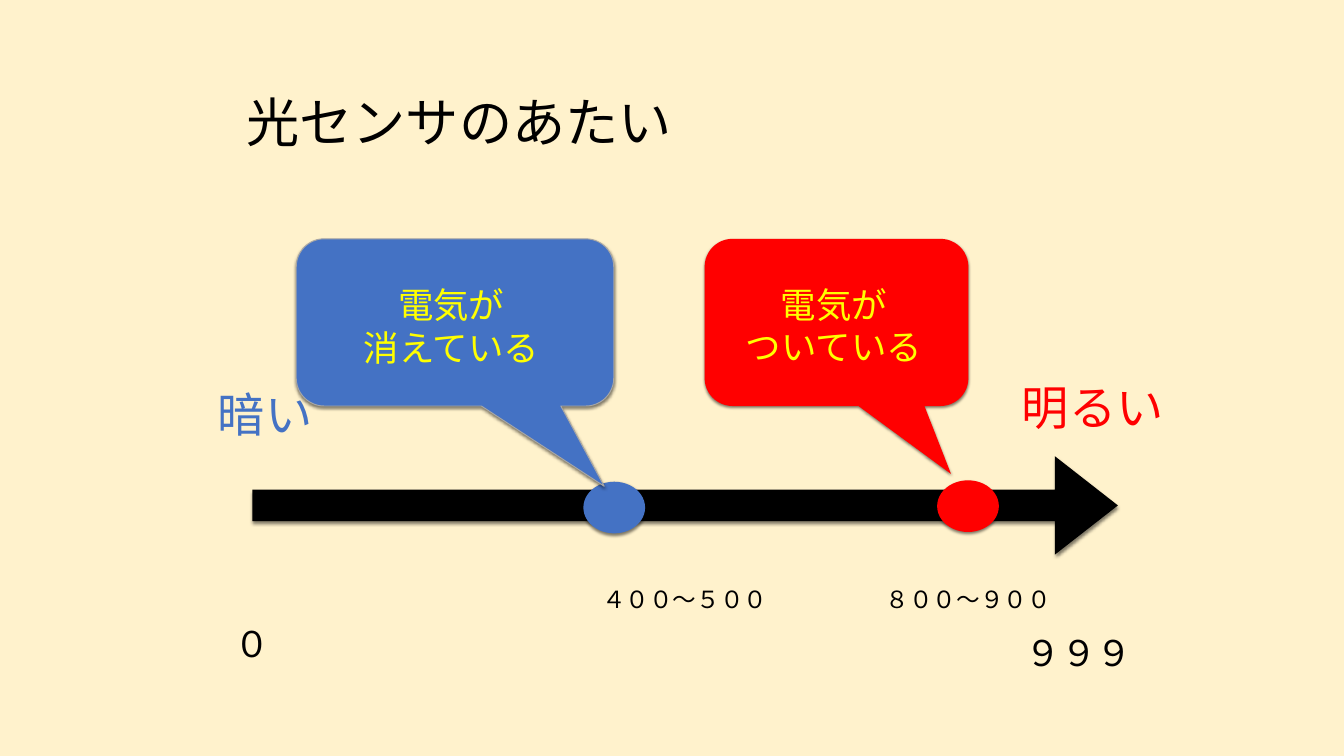
from lxml.etree import SubElement
from pptx import Presentation
from pptx.dml.color import RGBColor
from pptx.enum.shapes import MSO_SHAPE
from pptx.enum.text import MSO_ANCHOR, MSO_AUTO_SIZE, PP_ALIGN
from pptx.oxml.ns import qn
from pptx.util import Inches, Pt

BLACK, BLUE, RED, YELLOW = "000000", "4472C4", "FF0000", "FFFF00"
CREAM, GREY = "FFF2CC", "A6A6A6"
COLS, ROWS = 96, 54


def rgb(value):
    """Turn a hex string into a colour."""
    return RGBColor.from_string(value)


class SensorSlide:
    """Slide with a light sensor scale, placed on a grid of 96 by 54 cells."""

    font = "Noto Sans CJK JP"
    leading = 1.2
    inset = Inches(0.06)

    def __init__(self, prs, background):
        """Add a blank slide with a plain background."""
        self.col, self.row = prs.slide_width / COLS, prs.slide_height / ROWS
        self.s = prs.slides.add_slide(prs.slide_layouts[6])
        fill = self.s.background.fill
        fill.solid()
        fill.fore_color.rgb = rgb(background)

    def box(self, x, y, w, h):
        """Turn grid cells into lengths."""
        return [int(v) for v in (x * self.col, y * self.row, w * self.col, h * self.row)]

    def shadow(self, sp):
        """Give a shape a soft shadow below it."""
        sp.shadow.inherit = False
        effects = sp._element.spPr.find(qn("a:effectLst"))
        outer = SubElement(effects, qn("a:outerShdw"), blurRad=str(Pt(3)),
                           dist=str(Pt(2)), dir="5400000", rotWithShape="0")
        color = SubElement(outer, qn("a:srgbClr"), val=BLACK)
        SubElement(color, qn("a:alpha"), val="50000")

    def shape(self, kind, cells, color, adjust=(), line=None):
        """Draw a filled preset shape."""
        sp = self.s.shapes.add_shape(kind, *self.box(*cells))
        for i, value in enumerate(adjust):
            sp.adjustments[i] = value
        sp.fill.solid()
        sp.fill.fore_color.rgb = rgb(color)
        if line:
            sp.line.color.rgb = rgb(line)
            sp.line.width = Pt(1)
        else:
            sp.line.fill.background()
        self.shadow(sp)

    def text(self, lines, x, y, w, size, color=BLACK):
        """Write centred lines in a box as tall as they need."""
        left, top, width, _ = self.box(x, y, w, 0)
        height = Pt(size * self.leading) * len(lines) + 2 * self.inset
        tf = self.s.shapes.add_textbox(left, top, width, height).text_frame
        frame = {"word_wrap": True, "vertical_anchor": MSO_ANCHOR.MIDDLE,
                 "auto_size": MSO_AUTO_SIZE.SHAPE_TO_FIT_TEXT}
        frame |= {f"margin_{side}": self.inset for side in ("left", "top", "right", "bottom")}
        for name, value in frame.items():
            setattr(tf, name, value)
        for i, line in enumerate(lines):
            p = tf.add_paragraph() if i else tf.paragraphs[0]
            p.alignment = PP_ALIGN.CENTER
            p.line_spacing = Pt(size * self.leading)
            r = p.add_run()
            r.text = line
            for name, value in {"size": Pt(size), "name": self.font}.items():
                setattr(r.font, name, value)
            r.font.color.rgb = rgb(color)
            SubElement(r._r.get_or_add_rPr(), qn("a:ea"), typeface=self.font)


def main():
    """Build and save the slide."""
    prs = Presentation()
    prs.slide_width, prs.slide_height = Inches(18.96), Inches(10.67)
    slide = SensorSlide(prs, CREAM)

    slide.shape(MSO_SHAPE.RIGHT_ARROW, (18.03, 32.59, 61.82, 7.03), BLACK, (0.32, 0.64))
    labels = [
        ("光センサのあたい", 16.41, 6.07, 32.76, 54, BLACK),
        ("０", 14.58, 44.13, 6.89, 36, BLACK),
        ("９９９", 71.95, 44.74, 10.23, 36, BLACK),
        ("暗い", 13.82, 27.18, 10.23, 48, BLUE),
        ("明るい", 71.39, 26.72, 13.32, 48, RED),
        ("８００～９００", 62.73, 41.5, 12.86, 24, BLACK),
        ("４００～５００", 42.48, 41.5, 12.86, 24, BLACK),
    ]
    for label, *place in labels:
        slide.text([label], *place)

    for x, y, color in [(66.94, 34.31, RED), (41.67, 34.41, BLUE)]:
        slide.shape(MSO_SHAPE.FLOWCHART_CONNECTOR, (x, y, 4.41, 3.69), color)

    callouts = [
        (50.33, 18.84, RED, (0.434, 0.906, 0.167), None),
        (21.16, 22.68, BLUE, (0.47, 0.98, 0.167), GREY),
    ]
    for x, w, color, adjust, line in callouts:
        slide.shape(MSO_SHAPE.ROUNDED_RECTANGULAR_CALLOUT, (x, 17.06, w, 11.94),
                    color, adjust, line)
    states = [("ついている", 50.33, 19.89, 18.48), ("消えている", 18.03, 19.94, 28.41)]
    for state, *place in states:
        slide.text(["電気が", state], *place, 36, YELLOW)

    prs.save("out.pptx")


if __name__ == "__main__":
    main()
